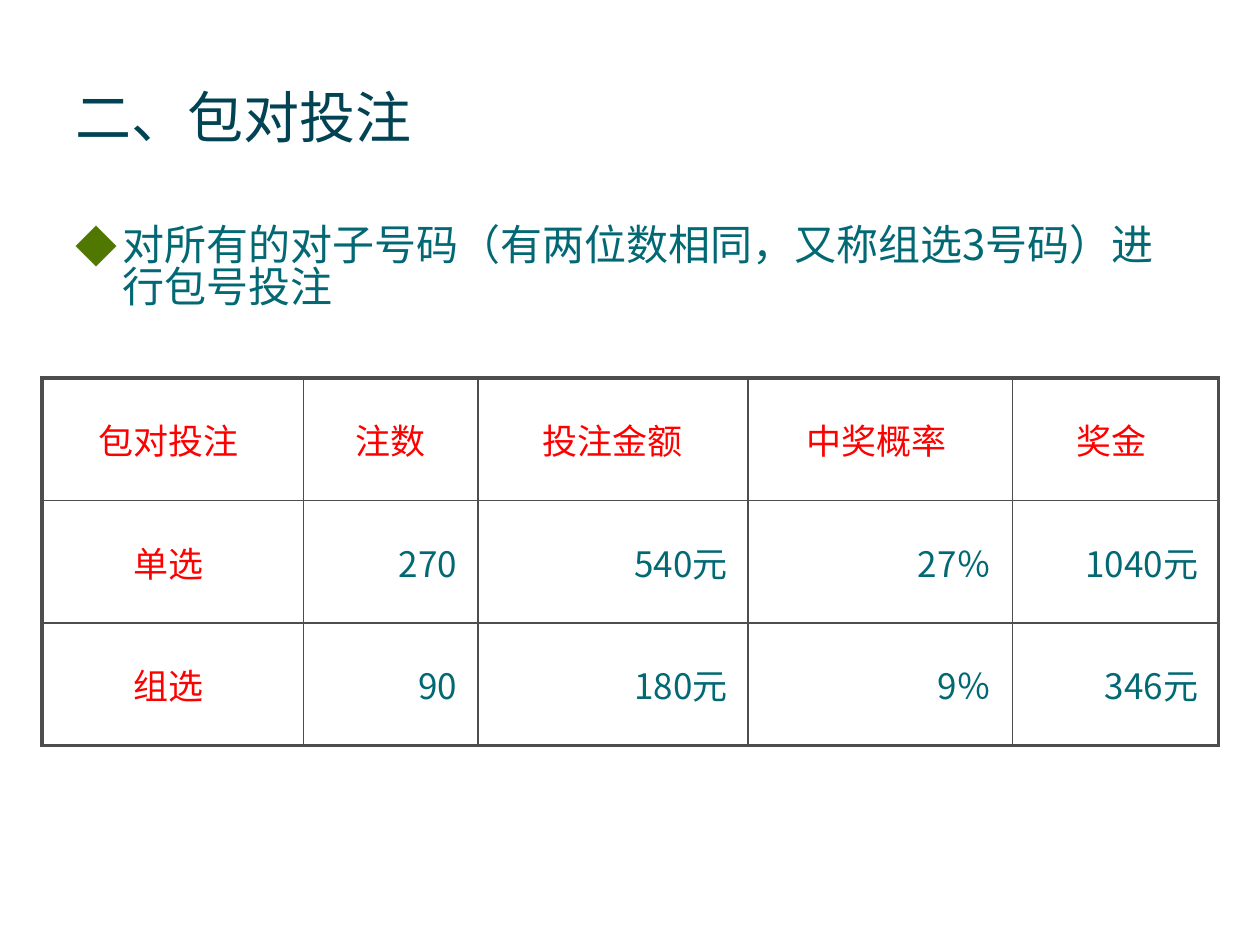
from pptx import Presentation
from pptx.dml.color import RGBColor
from pptx.enum.text import MSO_ANCHOR, PP_ALIGN
from pptx.oxml import parse_xml
from pptx.oxml.ns import nsdecls
from pptx.util import Pt

FONT = "Noto Sans CJK SC"
TITLE = RGBColor(0x01, 0x43, 0x53)
TEAL = RGBColor(0x02, 0x69, 0x74)
RED = RGBColor(0xFF, 0x00, 0x00)
WHITE = RGBColor(0xFF, 0xFF, 0xFF)
GREEN = RGBColor(0x50, 0x78, 0x00)
GREY = RGBColor(0x4D, 0x4D, 0x4D)


def style(p, size, color, align=PP_ALIGN.LEFT):
    p.alignment = align
    for r in p.runs:
        r.font.name = FONT
        r.font.size = Pt(size)
        r.font.color.rgb = color
        r.font._element.append(parse_xml(f'<a:ea {nsdecls("a")} typeface="{FONT}"/>'))


def add_border(cell, side, width):
    cell._tc.get_or_add_tcPr().append(parse_xml(
        f'<a:ln{side} {nsdecls("a")} w="{Pt(width)}"><a:solidFill>'
        f'<a:srgbClr val="{GREY}"/></a:solidFill></a:ln{side}>'))


prs = Presentation()
prs.slide_width, prs.slide_height = Pt(720), Pt(540)
s = prs.slides.add_slide(prs.slide_layouts[5])

# Title
title = s.shapes.title
title.left, title.top, title.width, title.height = Pt(36), Pt(21.6), Pt(648), Pt(90)
tf = title.text_frame
tf.text = "二、包对投注"
tf.vertical_anchor = MSO_ANCHOR.MIDDLE
style(tf.paragraphs[0], 32, TITLE)

# Bulleted statement
body = s.shapes.add_textbox(Pt(36), Pt(126), Pt(642.5), Pt(106.5))
tf = body.text_frame
tf.word_wrap = True
p = tf.paragraphs[0]
p.text = "对所有的对子号码（有两位数相同，又称组选3号码）进行包号投注"
p.line_spacing = 0.84
pPr = p._p.get_or_add_pPr()
pPr.set("marL", str(Pt(27)))
pPr.set("indent", str(Pt(-27)))
for bullet in (f'<a:buClr {nsdecls("a")}><a:srgbClr val="{GREEN}"/></a:buClr>',
               f'<a:buFont {nsdecls("a")} typeface="{FONT}"/>',
               f'<a:buChar {nsdecls("a")} char="◆"/>'):
    pPr.append(parse_xml(bullet))
style(p, 24, TEAL)

# Betting table; trailing spaces keep the figures off the cell edge
rows = [
    ["包对投注 ", "注数", "投注金额", "中奖概率 ", "奖金 "],
    ["单选 ", "270 ", "540元 ", "27％ ", "1040元 "],
    ["组选 ", "90 ", "180元 ", "9％ ", "346元 "],
]
col_widths = [149.5, 99.5, 154.5, 151, 118]
row_height = 70
table = s.shapes.add_table(len(rows), len(col_widths), Pt(24), Pt(216),
                           Pt(sum(col_widths)), Pt(row_height * len(rows))).table
for col, width in zip(table.columns, col_widths):
    col.width = Pt(width)

last_row, last_col = len(rows) - 1, len(col_widths) - 1
for i, row in enumerate(rows):
    table.rows[i].height = Pt(row_height)
    for j, text in enumerate(row):
        cell = table.cell(i, j)
        cell.text = text
        cell.vertical_anchor = MSO_ANCHOR.MIDDLE
        is_label = i == 0 or j == 0
        style(cell.text_frame.paragraphs[0], 20, RED if is_label else TEAL,
              PP_ALIGN.CENTER if is_label else PP_ALIGN.RIGHT)
        outer = {"L": j == 0, "R": j == last_col, "T": i == 0, "B": i == last_row}
        for side, is_outer in outer.items():
            add_border(cell, side, 2.25 if is_outer else 1)
        cell.fill.solid()
        cell.fill.fore_color.rgb = WHITE

prs.save("out.pptx")
